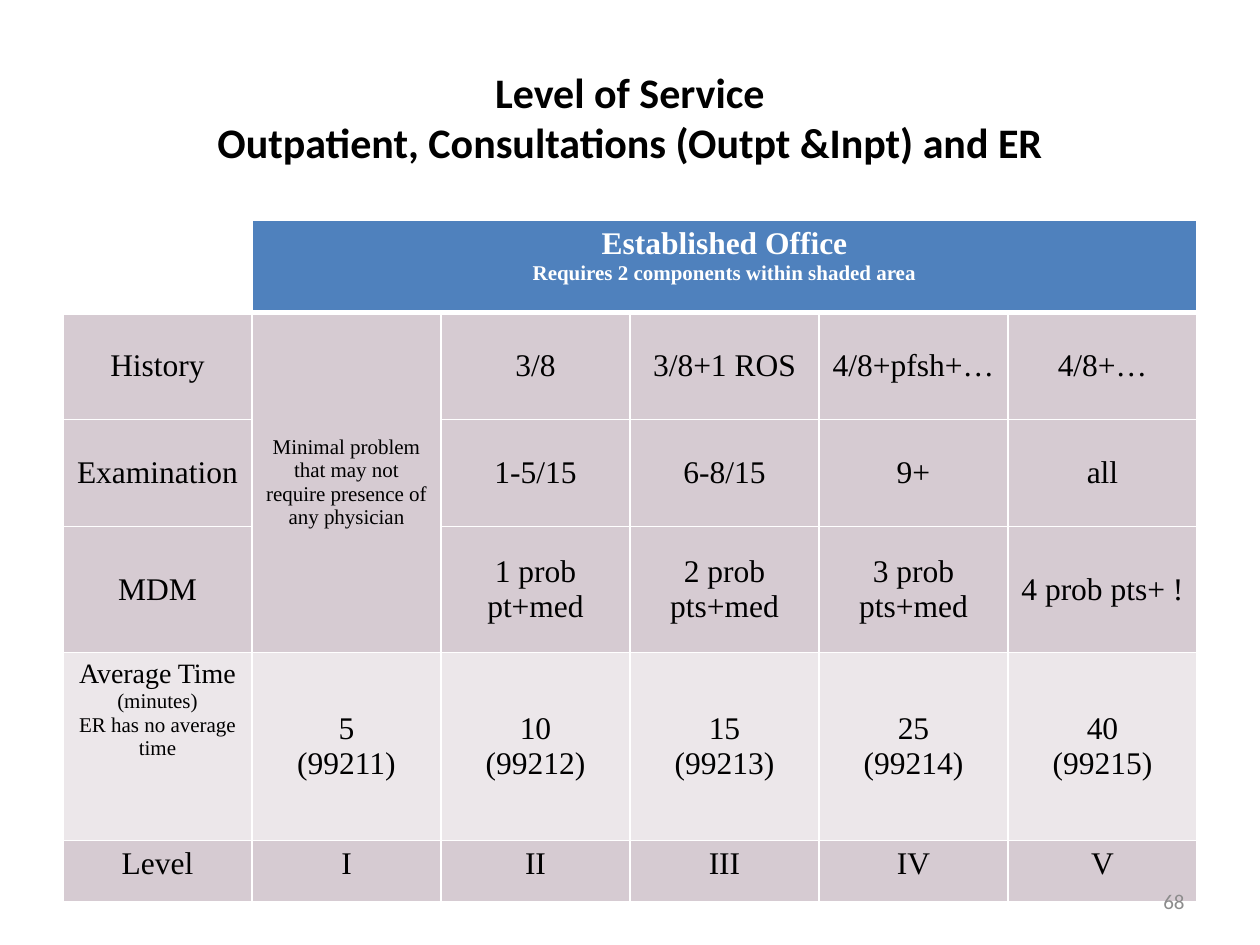
import pptx
import pptx.util
import pptx.dml.color
import pptx.enum.text
import pptx.oxml
import pptx.oxml.ns
from lxml import etree

Inches = pptx.util.Inches
Pt = pptx.util.Pt
ALIGN = pptx.enum.text.PP_ALIGN
ANCHOR = pptx.enum.text.MSO_ANCHOR
COLORS = {"ink": "000000", "white": "FFFFFF", "head": "4F81BD",
          "dark": "D6CBD2", "light": "ECE7EA", "gray": "8C8C8C"}
HEIGHTS = [0.73, 0.85, 0.85, 1, 1.49, 0.49]
TIMES = [5, 10, 15, 25, 40]
ROWS = [
    ["", [[("Established Office", 18)],
          [("Requires 2 components within shaded area", 12)]], "", "", "", ""],
    ["History",
     [[("Minimal problem that may not require presence of any physician", 12)]],
     "3/8", "3/8+1 ROS", "4/8+pfsh+…", "4/8+…"],
    ["Examination", "", "1-5/15", "6-8/15", "9+", "all"],
    ["MDM", "", "1 prob pt+med", "2 prob pts+med", "3 prob pts+med",
     "4 prob pts+ !"],
    [[[("Average Time ", 16), ("(minutes)", 12)],
      [("ER has no average time", 12)]]]
    + [[[(str(time), 18)], [(f"({code})", 18)]]
       for code, time in enumerate(TIMES, 99211)],
    ["Level", "I", "II", "III", "IV", "V"],
]


def color(name):
    return pptx.dml.color.RGBColor.from_string(COLORS[name])


def style(para, face, tint, align, size=None, bold=False):
    para.alignment = align
    font = para.font
    font.name, font.bold = face, bold
    font.color.rgb = color(tint)
    if size:
        font.size = Pt(size)


def place(shape, box):
    shape.left, shape.top, shape.width, shape.height = map(Inches, box)


def add_title(slide, box):
    title = slide.shapes.title
    place(title, box)
    frame = title.text_frame
    frame.text = "Level of Service\vOutpatient, Consultations (Outpt &Inpt) and ER"
    frame.vertical_anchor = ANCHOR.MIDDLE
    style(frame.paragraphs[0], "Calibri", "ink", ALIGN.CENTER, 24, True)


def add_edges(cell, row):
    props = cell._tc.get_or_add_tcPr()
    widths = {"L": 1, "R": 1, "T": 3 if row == 1 else 1, "B": 3 if row == 0 else 1}
    qn = pptx.oxml.ns.qn
    for side, width in widths.items():
        line = etree.SubElement(props, qn(f"a:ln{side}"), w=str(Pt(width)))
        fill = etree.SubElement(line, qn("a:solidFill"))
        etree.SubElement(fill, qn("a:srgbClr"), val=COLORS["white"])


def fill_cell(cell, row, col, text):
    add_edges(cell, row)
    if row == 0 and col == 0:
        cell.fill.background()
    else:
        cell.fill.solid()
        cell.fill.fore_color.rgb = color({0: "head", 4: "light"}.get(row, "dark"))
    top = row in (0, 5) or (row == 4 and col == 0)
    cell.vertical_anchor = ANCHOR.TOP if top else ANCHOR.MIDDLE
    cell.margin_left = cell.margin_right = Inches(0.08)
    cell.margin_top = cell.margin_bottom = Inches(0.05)
    if not text:
        return
    lines = [[(text, 18)]] if isinstance(text, str) else text
    frame = cell.text_frame
    for i, runs in enumerate(lines):
        para = frame.add_paragraph() if i else frame.paragraphs[0]
        style(para, "Times New Roman", "ink" if row else "white",
              ALIGN.CENTER, bold=row == 0)
        for words, size in runs:
            run = para.add_run()
            run.text = words
            run.font.size = Pt(size)


def add_grid(slide, box):
    table = slide.shapes.add_table(len(ROWS), len(ROWS[0]), *map(Inches, box)).table
    table.first_row = table.horz_banding = False
    for col in table.columns:
        col.width = Inches(box[2] / len(ROWS[0]))
    for row, height in zip(table.rows, HEIGHTS):
        row.height = Inches(height)
    table.cell(0, 1).merge(table.cell(0, 5))
    table.cell(1, 1).merge(table.cell(3, 1))
    for r, row in enumerate(ROWS):
        for c, text in enumerate(row):
            fill_cell(table.cell(r, c), r, c, text)


def add_number(slide, box):
    frame = slide.shapes.add_textbox(*map(Inches, box)).text_frame
    frame.word_wrap = True
    frame.vertical_anchor = ANCHOR.MIDDLE
    frame.text = "68"
    style(frame.paragraphs[0], "Calibri", "gray", ALIGN.RIGHT, 12)


def main():
    deck = pptx.Presentation()
    deck.slide_width, deck.slide_height = Inches(10), Inches(7.5)
    slide = deck.slides.add_slide(deck.slide_layouts[5])
    add_title(slide, (0.5, 0.3, 9, 1.25))
    add_grid(slide, (0.5, 1.75, 9, 5.4))
    add_number(slide, (7.17, 6.95, 2.33, 0.4))
    deck.save("out.pptx")


if __name__ == "__main__":
    main()
